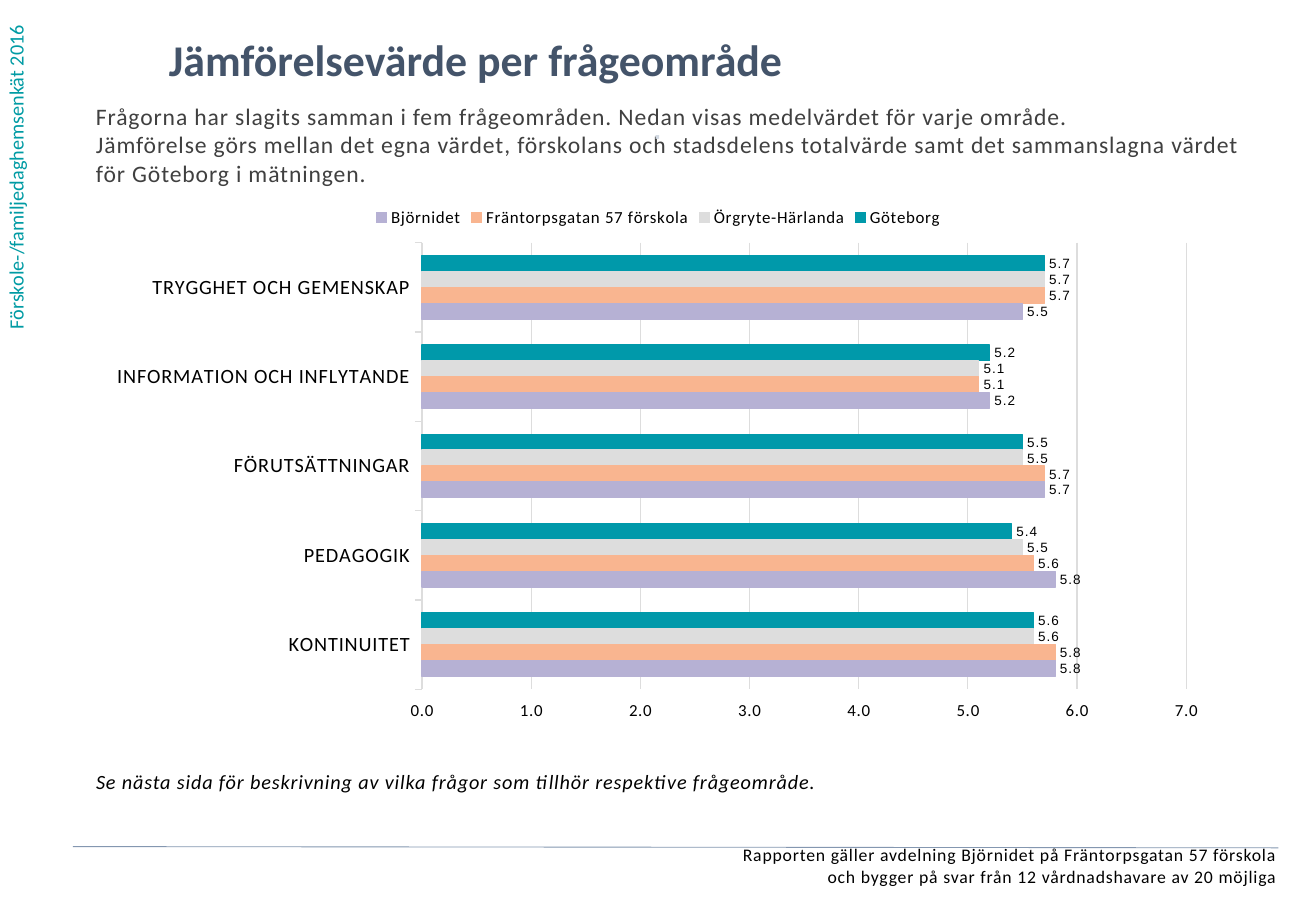
from lxml import etree
from pptx import Presentation
from pptx import util as u
from pptx.chart.data import CategoryChartData
from pptx.dml.color import RGBColor
from pptx.enum import chart as ch, shapes, text
from pptx.oxml import parse_xml
from pptx.oxml.ns import nsdecls, qn

THEME = {
    "font": "Calibri", "label_font": "Arial", "spacing": 50,
    "teal": "009BA4", "navy": "44546A", "grey": "404040", "black": "000000",
    "pale": "D2D9E2", "rule": "8497B0", "grid": "DDDDDD",
    "title": 26, "intro": 14, "body": 12, "footer": 10.5, "axis": 10, "label": 8,
}

TEXTS = [
    {"lines": ["Förskole-/familjedaghemsenkät 2016"], "at": (-0.02, 0, 0.4, 2.81),
     "size": "body", "color": "teal", "vertical": True},
    {"lines": ["Jämförelsevärde per frågeområde"], "at": (1.39, 0.27, 8.34, 0.57),
     "size": "title", "color": "navy", "bold": True},
    {"lines": ["Frågorna har slagits samman i fem frågeområden. Nedan visas medelvärdet för varje område.",
               "Jämförelse görs mellan det egna värdet, förskolans och stadsdelens totalvärde "
               "samt det sammanslagna värdet för Göteborg i mätningen."],
     "at": (0.79, 0.84, 9.46, 0.74), "size": "intro", "color": "grey", "spaced": True},
    {"lines": ["Rapporten gäller avdelning Björnidet på Fräntorpsgatan 57 förskola",
               "och bygger på svar från 12 vårdnadshavare av 20 möjliga"],
     "at": (0.11, 6.95, 10.4, 0.43), "size": "footer", "color": "black",
     "align": text.PP_ALIGN.RIGHT, "spaced": True},
    {"lines": ["⋅"], "at": (3.87, 1.02, 3.08, 0.39), "size": "body", "color": "pale",
     "align": text.PP_ALIGN.CENTER, "bold": True, "spaced": True},
    {"lines": ["Se nästa sida för beskrivning av vilka frågor som tillhör respektive frågeområde."],
     "at": (0.79, 6.33, 9.25, 0.3), "size": "body", "color": "black",
     "italic": True, "spaced": True},
]

AREAS = ["TRYGGHET OCH GEMENSKAP", "INFORMATION OCH INFLYTANDE", "FÖRUTSÄTTNINGAR",
         "PEDAGOGIK", "KONTINUITET"]
GROUPS = [
    ("Göteborg", (5.7, 5.2, 5.5, 5.4, 5.6), "0099AA"),
    ("Örgryte-Härlanda", (5.7, 5.1, 5.5, 5.5, 5.6), "DDDDDD"),
    ("Fräntorpsgatan 57 förskola", (5.7, 5.1, 5.7, 5.6, 5.8), "F9B590"),
    ("Björnidet", (5.5, 5.2, 5.7, 5.8, 5.8), "B6B1D4"),
]
CHART_AT = (0.79, 1.6, 9.25, 4.43)
PLOT_AT = {"x": 0.29, "y": 0.09, "w": 0.68, "h": 0.83}
RULE = (0.6, 6.97, 10.52, 6.98)
NUMBER = "0.0;0.0"


def inches(lengths):
    return [u.Inches(length) for length in lengths]


def style(font, size, color="black", face="font"):
    font.name = THEME[face]
    font.size = u.Pt(THEME[size])
    font.color.rgb = RGBColor.from_string(THEME[color])


def outline(line, color, width):
    line.color.rgb = RGBColor.from_string(color)
    line.width = u.Pt(width)


def add_text(slide, part):
    frame = slide.shapes.add_textbox(*inches(part["at"])).text_frame
    frame.word_wrap = True
    if part.get("vertical"):
        frame._txBody.bodyPr.set("vert", "vert270")
    else:
        frame.margin_left = frame.margin_right = frame.margin_top = frame.margin_bottom = 0
    frame.text = "\n".join(part["lines"])
    for paragraph in frame.paragraphs:
        paragraph.alignment = part.get("align", text.PP_ALIGN.LEFT)
        for run in paragraph.runs:
            style(run.font, part["size"], part["color"])
            run.font.bold = part.get("bold", False)
            run.font.italic = part.get("italic", False)
            if part.get("spaced"):
                run._r.get_or_add_rPr().set("spc", str(THEME["spacing"]))


def place_plot(chart):
    area = chart._chartSpace.chart.plotArea
    for layout in area.findall(qn("c:layout")):
        area.remove(layout)
    modes = '<c:layoutTarget val="inner"/><c:xMode val="edge"/><c:yMode val="edge"/>'
    sizes = "".join(f'<c:{key} val="{share}"/>' for key, share in PLOT_AT.items())
    area.insert(0, parse_xml(f'<c:layout {nsdecls("c")}><c:manualLayout>{modes}{sizes}'
                             '</c:manualLayout></c:layout>'))


def add_comparison(slide):
    data = CategoryChartData(number_format="0.0")
    data.categories = AREAS
    for name, means, _ in GROUPS:
        data.add_series(name, means)
    chart = slide.shapes.add_chart(ch.XL_CHART_TYPE.BAR_CLUSTERED, *inches(CHART_AT), data).chart
    style(chart.font, "axis")
    chart.has_title = False
    chart.has_legend = True
    chart.legend.position = ch.XL_LEGEND_POSITION.TOP
    chart.legend.include_in_layout = False
    style(chart.legend.font, "axis")

    areas, means = chart.category_axis, chart.value_axis
    areas.reverse_order = True
    areas.major_tick_mark = means.major_tick_mark = ch.XL_TICK_MARK.OUTSIDE
    style(areas.tick_labels.font, "body")
    outline(areas.format.line, THEME["grid"], 0.75)
    means.minimum_scale, means.maximum_scale, means.major_unit = 0, 7, 1
    means.tick_label_position = ch.XL_TICK_LABEL_POSITION.HIGH
    means.tick_labels.number_format = NUMBER
    means.tick_labels.number_format_is_linked = False
    style(means.tick_labels.font, "axis")
    means.format.line.fill.background()
    means.has_major_gridlines = True
    outline(means.major_gridlines.format.line, THEME["grid"], 0.75)

    plot = chart.plots[0]
    plot.gap_width, plot.overlap, plot.vary_by_categories = 162, 0, False
    for series, (_, _, color) in zip(plot.series, GROUPS):
        series.format.fill.solid()
        series.format.fill.fore_color.rgb = RGBColor.from_string(color)
        outline(series.format.line, color, 0.75)
        labels = series.data_labels
        labels.show_value = True
        labels.number_format = NUMBER
        labels.number_format_is_linked = False
        labels.position = ch.XL_LABEL_POSITION.OUTSIDE_END
        style(labels.font, "label", face="label_font")
    place_plot(chart)
    for properties in chart._chartSpace.iter(qn("a:defRPr")):
        properties.set("spc", str(THEME["spacing"]))


def add_rule(slide):
    rule = slide.shapes.add_connector(shapes.MSO_CONNECTOR.STRAIGHT, *inches(RULE))
    outline(rule.line, THEME["rule"], 0.5)
    etree.SubElement(rule._element.spPr, qn("a:effectLst"))


def main():
    deck = Presentation()
    deck.slide_width, deck.slide_height = inches((10.83, 7.5))
    slide = deck.slides.add_slide(deck.slide_layouts[6])
    for part in TEXTS:
        add_text(slide, part)
    add_comparison(slide)
    add_rule(slide)
    deck.save("out.pptx")


if __name__ == "__main__":
    main()
